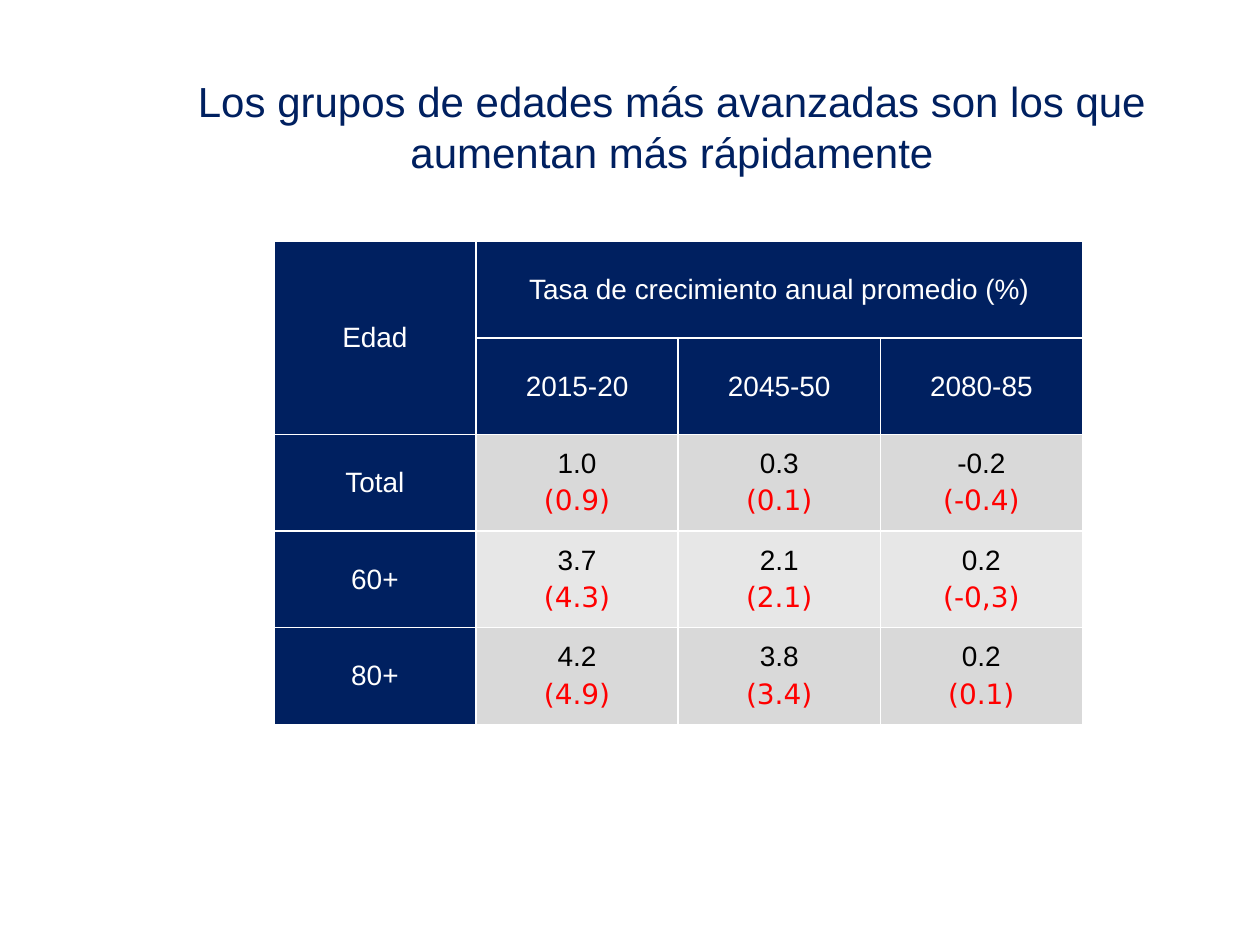
import pptx
import pptx.dml.color
import pptx.enum.text
import pptx.oxml
import pptx.oxml.ns
import pptx.util

Cm = pptx.util.Cm
Pt = pptx.util.Pt

COLORS = {
    "navy": "002060",
    "white": "FFFFFF",
    "black": "000000",
    "red": "FF0000",
    "gray": "D9D9D9",
    "light_gray": "E7E7E7",
}

FORMATS = {
    "title": {"name": "Arial", "size": Pt(24), "bold": False, "color": "navy"},
    "header": {"name": "Arial", "size": Pt(16), "bold": False, "color": "white"},
    "rate": {"name": "Arial", "size": Pt(16), "bold": False, "color": "black"},
    "earlier_rate": {"name": "DejaVu Sans", "size": Pt(16), "bold": False, "color": "red"},
}

TITLE = "Los grupos de edades más avanzadas son los que aumentan más rápidamente"
PERIODS = ["2015-20", "2045-50", "2080-85"]
RATES = {
    "Total": [("1.0", "(0.9)"), ("0.3", "(0.1)"), ("-0.2", "(-0.4)")],
    "60+": [("3.7", "(4.3)"), ("2.1", "(2.1)"), ("0.2", "(-0,3)")],
    "80+": [("4.2", "(4.9)"), ("3.8", "(3.4)"), ("0.2", "(0.1)")],
}


def rgb(name):
    return pptx.dml.color.RGBColor.from_string(COLORS[name])


def write_line(paragraph, text, style):
    paragraph.alignment = pptx.enum.text.PP_ALIGN.CENTER
    run = paragraph.add_run()
    run.text = text
    for attribute, value in FORMATS[style].items():
        if attribute == "color":
            run.font.color.rgb = rgb(value)
        else:
            setattr(run.font, attribute, value)


def add_borders(cell):
    properties = cell._tc.get_or_add_tcPr()
    for side in ("lnL", "lnR", "lnT", "lnB"):
        properties.append(pptx.oxml.parse_xml(
            f'<a:{side} {pptx.oxml.ns.nsdecls("a")} w="{Pt(1)}"><a:solidFill>'
            f'<a:srgbClr val="{COLORS["white"]}"/></a:solidFill></a:{side}>'))


def fill_cell(cell, fill, lines):
    cell.fill.solid()
    cell.fill.fore_color.rgb = rgb(fill)
    cell.vertical_anchor = pptx.enum.text.MSO_ANCHOR.MIDDLE
    frame = cell.text_frame
    for index, (text, style) in enumerate(lines):
        paragraph = frame.add_paragraph() if index else frame.paragraphs[0]
        if index:
            paragraph.space_before = Pt(3.2)
        write_line(paragraph, text, style)


def place_title(slide, left, top, width, height):
    title = slide.shapes.title
    title.left, title.top, title.width, title.height = left, top, width, height
    title.text_frame.word_wrap = True
    title.text_frame.vertical_anchor = pptx.enum.text.MSO_ANCHOR.MIDDLE
    write_line(title.text_frame.paragraphs[0], TITLE, "title")


def place_growth_table(slide, left, top, width, height):
    row_count, column_count = len(RATES) + 2, len(PERIODS) + 1
    table = slide.shapes.add_table(row_count, column_count, left, top, width, height).table
    for column in table.columns:
        column.width = width // column_count
    for row in table.rows:
        row.height = height // row_count
    for cell in table.iter_cells():
        add_borders(cell)

    table.cell(0, 0).merge(table.cell(1, 0))
    table.cell(0, 1).merge(table.cell(0, column_count - 1))
    headers = {(0, 0): "Edad", (0, 1): "Tasa de crecimiento anual promedio (%)"}
    headers.update({(1, column): period for column, period in enumerate(PERIODS, 1)})
    headers.update({(row, 0): age for row, age in enumerate(RATES, 2)})
    for position, text in headers.items():
        fill_cell(table.cell(*position), "navy", [(text, "header")])

    for row, rates in enumerate(RATES.values(), 2):
        band = "light_gray" if row % 2 else "gray"
        for column, pair in enumerate(rates, 1):
            fill_cell(table.cell(row, column), band, zip(pair, ("rate", "earlier_rate")))


def main():
    deck = pptx.Presentation()
    deck.slide_width, deck.slide_height = Cm(25.4), Cm(19.05)
    slide = deck.slides.add_slide(deck.slide_layouts.get_by_name("Title Only"))
    place_title(slide, Cm(2.96), Cm(0.85), Cm(21.17), Cm(3.39))
    place_growth_table(slide, Cm(5.52), Cm(4.87), Cm(16.3), Cm(9.73))
    deck.save("out.pptx")


if __name__ == "__main__":
    main()
